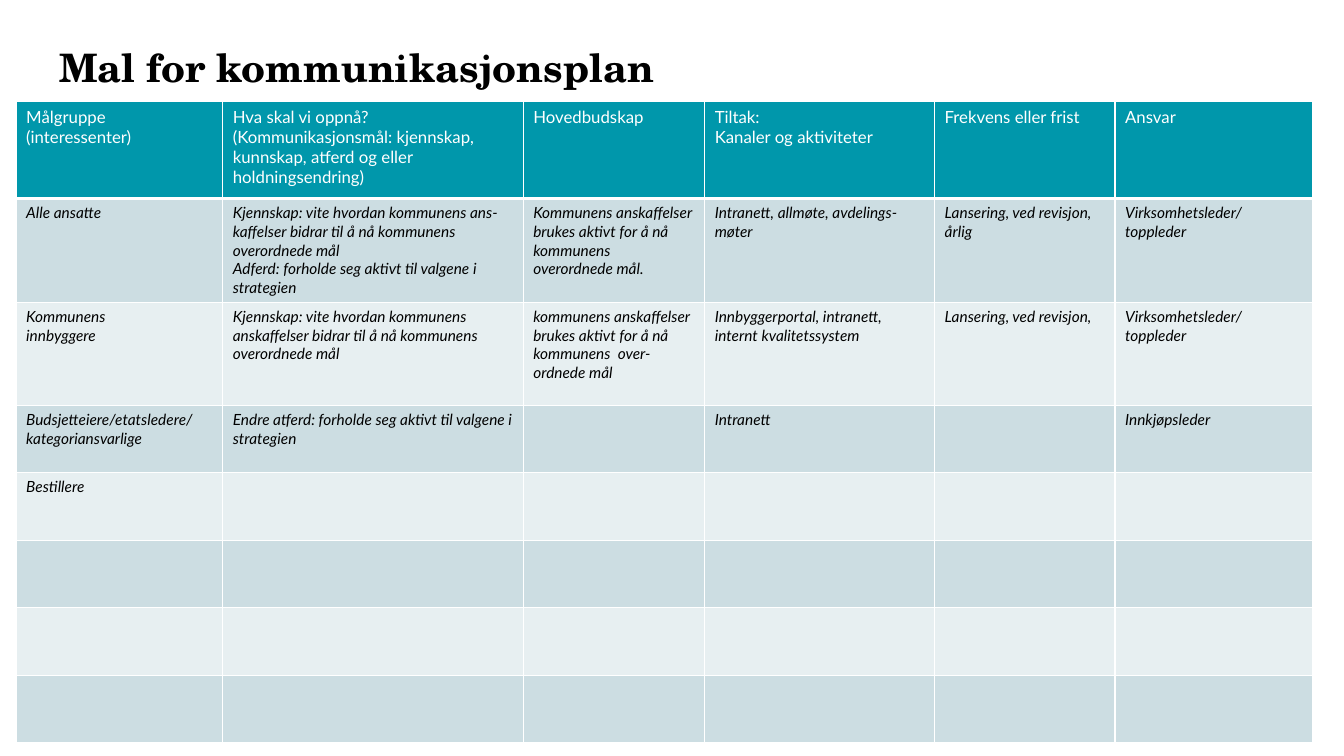
from lxml import etree
from pptx import Presentation
from pptx.dml.color import RGBColor
from pptx.enum.text import MSO_ANCHOR
from pptx.oxml.ns import qn
from pptx.util import Inches, Pt

TOP = MSO_ANCHOR.TOP
COLORS = {
    "head": "0097AB",
    "dark": "CCDDE2",
    "light": "E7EFF1",
    "white": "FFFFFF",
    "black": "000000",
}
WIDTHS = [2.05, 2.98, 1.8, 2.28, 1.79, 1.96]
HEIGHTS = [0.96, 1.03, 1.02] + [0.67] * 5
PLAN = [
    [
        "Målgruppe (interessenter)",
        "Hva skal vi oppnå?\n(Kommunikasjonsmål: kjennskap, kunnskap, atferd og eller holdningsendring)",
        "Hovedbudskap",
        "Tiltak:\nKanaler og aktiviteter",
        "Frekvens eller frist",
        "Ansvar",
    ],
    [
        "Alle ansatte",
        "Kjennskap: vite hvordan kommunens ans-kaffelser bidrar til å nå kommunens overordnede mål\n"
        "Adferd: forholde seg aktivt til valgene i strategien",
        "Kommunens anskaffelser brukes aktivt for å nå kommunens  overordnede mål. ",
        "Intranett, allmøte, avdelings-møter",
        "Lansering, ved revisjon, årlig",
        "Virksomhetsleder/toppleder",
    ],
    [
        "Kommunens \ninnbyggere",
        "Kjennskap: vite hvordan kommunens anskaffelser bidrar til å nå kommunens overordnede mål",
        "kommunens anskaffelser brukes aktivt for å nå kommunens  over-ordnede mål",
        "Innbyggerportal, intranett, internt kvalitetssystem",
        "Lansering, ved revisjon,",
        "Virksomhetsleder/toppleder",
    ],
    [
        "Budsjetteiere/etatsledere/kategoriansvarlige",
        "Endre atferd: forholde seg aktivt til valgene i strategien ",
        "",
        "Intranett",
        "",
        "Innkjøpsleder",
    ],
    ["Bestillere"] + [""] * 5,
] + [[""] * 6] * 3


def tint(name):
    return RGBColor.from_string(COLORS[name])


def style(par, face, size, color, bold=False, slant=False):
    for run in par.runs:
        font = run.font
        font.name = face
        font.size = Pt(size)
        font.bold = bold
        font.italic = slant
        font.color.rgb = tint(color)


def edge(cell, sides):
    props = cell._tc.get_or_add_tcPr()
    for side, width in sides.items():
        line = etree.SubElement(props, qn("a:ln" + side), w=str(Pt(width)))
        fill = etree.SubElement(line, qn("a:solidFill"))
        etree.SubElement(fill, qn("a:srgbClr"), val=COLORS["white"])


def add_title(slide, left, top, width, height):
    box = slide.shapes.add_textbox(Inches(left), Inches(top), Inches(width), Inches(height))
    frame = box.text_frame
    frame.word_wrap = True
    frame.vertical_anchor = TOP
    frame.margin_left = frame.margin_right = 0
    frame.margin_top = frame.margin_bottom = 0
    frame.text = "Mal for kommunikasjonsplan"
    par = frame.paragraphs[0]
    par.line_spacing = 0.9
    style(par, "TeX Gyre Schola", 28, "black", bold=True)


def add_plan(slide, left, top, width, height):
    table = slide.shapes.add_table(
        len(PLAN), len(WIDTHS), Inches(left), Inches(top), Inches(width), Inches(height)
    ).table
    for col, size in zip(table.columns, WIDTHS):
        col.width = Inches(size)
    for row, size in zip(table.rows, HEIGHTS):
        row.height = Inches(size)
    for i, texts in enumerate(PLAN):
        head = i == 0
        shade = "head" if head else "dark" if i % 2 else "light"
        for j, text in enumerate(texts):
            cell = table.cell(i, j)
            edge(cell, {"L": 1, "R": 1, "T": 3 if i == 1 else 1, "B": 3 if head else 1})
            cell.fill.solid()
            cell.fill.fore_color.rgb = tint(shade)
            cell.text_frame.text = text
            for par in cell.text_frame.paragraphs:
                if head:
                    style(par, "Lato", 12, "white")
                else:
                    style(par, "Lato", 11, "black", slant=True)


def main():
    deck = Presentation()
    deck.slide_width = Inches(13.33)
    deck.slide_height = Inches(7.5)
    slide = deck.slides.add_slide(deck.slide_layouts[6])
    add_title(slide, 0.59, 0.48, 12.14, 0.77)
    add_plan(slide, 0.16, 1.01, sum(WIDTHS), sum(HEIGHTS))
    deck.save("out.pptx")


if __name__ == "__main__":
    main()
